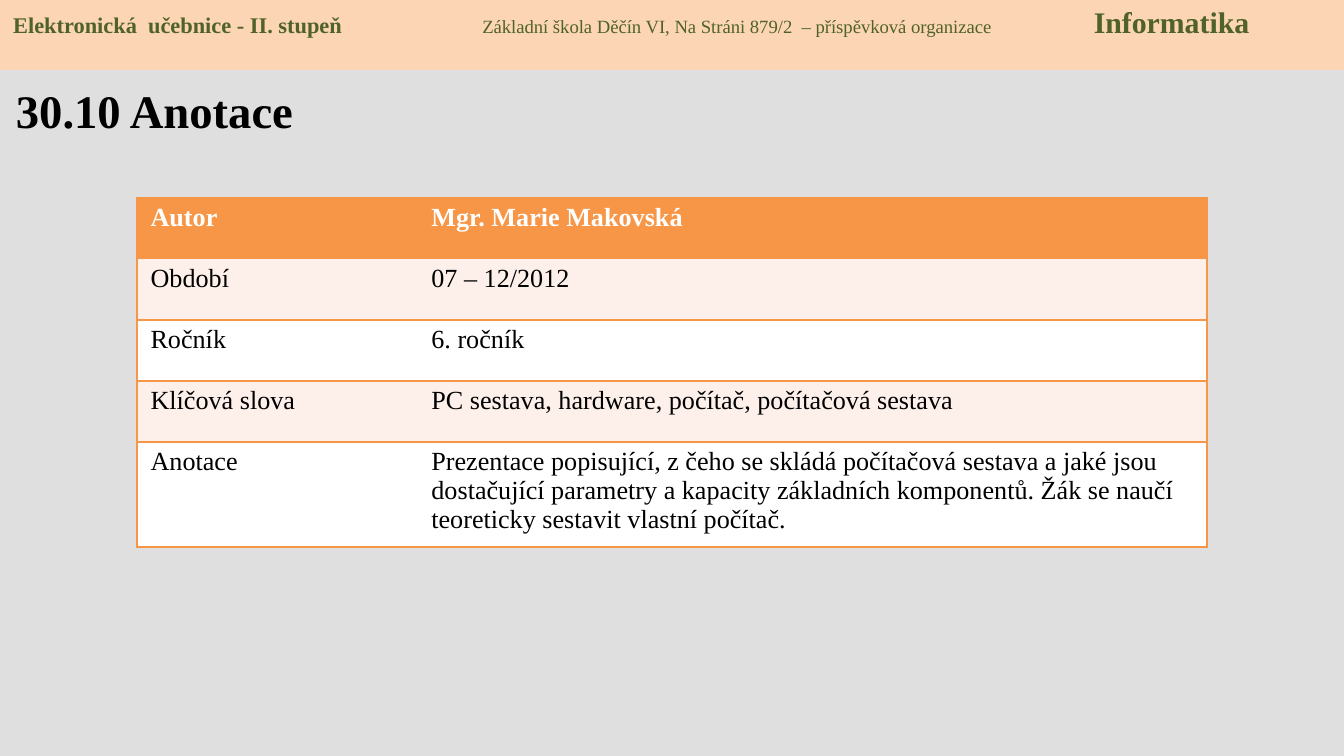
from lxml import etree
from pptx import Presentation
from pptx.dml.color import RGBColor
from pptx.enum.shapes import MSO_SHAPE
from pptx.enum.text import MSO_ANCHOR, PP_ALIGN
from pptx.oxml.ns import qn
from pptx.util import Inches, Pt

RECT = MSO_SHAPE.RECTANGLE
TOP = MSO_ANCHOR.TOP
LEFT = PP_ALIGN.LEFT
FONT = "Times New Roman"
ORANGE, GREEN = "F79646", "4F6228"
BLACK, WHITE, PINK = "000000", "FFFFFF", "FDEFE9"


def style(font, size, color, bold):
    font.name, font.size, font.bold = FONT, Pt(size), bold
    font.color.rgb = RGBColor.from_string(color)


def add_edges(cell, shown):
    """Draw the named cell edges in orange and clear the others."""
    props = cell._tc.get_or_add_tcPr()
    for side in ("L", "R", "T", "B"):
        line = etree.SubElement(props, qn(f"a:ln{side}"), w=str(Pt(1)))
        if side in shown:
            fill = etree.SubElement(line, qn("a:solidFill"))
            etree.SubElement(fill, qn("a:srgbClr"), val=ORANGE)
        else:
            etree.SubElement(line, qn("a:noFill"))


prs = Presentation()
prs.slide_width = Inches(10)
prs.slide_height = Inches(10) * 9 // 16
slide = prs.slides.add_slide(prs.slide_layouts[6])
back = slide.background.fill
back.solid()
back.fore_color.rgb = RGBColor.from_string("DFDFDF")

# Title
title = slide.shapes.add_textbox(Inches(0.02), Inches(0.56), Inches(3.19), Inches(0.49))
title.text_frame.word_wrap = True
title.text_frame.text = "30.10 Anotace"
style(title.text_frame.paragraphs[0].runs[0].font, 25, BLACK, True)

# Annotation table
rows = [
    ("Autor", "Mgr. Marie Makovská"),
    ("Období", "07 – 12/2012"),
    ("Ročník", "6. ročník"),
    ("Klíčová slova", "PC sestava, hardware, počítač, počítačová sestava"),
    ("Anotace", "Prezentace popisující, z čeho se skládá počítačová sestava a jaké jsou "
     "dostačující parametry a kapacity základních komponentů. Žák se naučí "
     "teoreticky sestavit vlastní počítač."),
]
table = slide.shapes.add_table(len(rows), 2, Inches(1.02), Inches(1.47),
                               Inches(7.96), Inches(2.6)).table
for col, width in zip(table.columns, (2.09, 5.87)):
    col.width = Inches(width)
for i, texts in enumerate(rows):
    table.rows[i].height = Inches(0.78) if i == len(rows) - 1 else Inches(1.82) // 4
    shade = ORANGE if i == 0 else PINK if i % 2 else WHITE
    for j, text in enumerate(texts):
        cell = table.cell(i, j)
        add_edges(cell, "LTB" if j == 0 else "RTB")
        cell.fill.solid()
        cell.fill.fore_color.rgb = RGBColor.from_string(shade)
        cell.margin_left = cell.margin_right = Inches(0.1)
        cell.margin_top = cell.margin_bottom = Inches(0.04)
        cell.text = text
        run = cell.text_frame.paragraphs[0].runs[0]
        style(run.font, 14, BLACK if i else WHITE, i == 0)

# Header band
band = slide.shapes.add_shape(RECT, 0, Inches(-0.02), Inches(10), Inches(0.54))
band.shadow.inherit = False
band.fill.solid()
band.fill.fore_color.rgb = RGBColor.from_string("FCD5B5")
band.line.fill.background()
frame = band.text_frame
frame.word_wrap = True
frame.vertical_anchor = TOP
frame.margin_top = Inches(0.05)
para = frame.paragraphs[0]
para.alignment = LEFT
tabs = etree.SubElement(para._p.get_or_add_pPr(), qn("a:tabLst"))
for stop in (3.49, 8.04):
    etree.SubElement(tabs, qn("a:tab"), pos=str(Inches(stop)), algn="l")
for text, size, bold in [
    ("Elektronická  učebnice - II. stupeň\t", 12, True),
    ("Základní škola Děčín VI, Na Stráni 879/2  – příspěvková organizace\t", 10, False),
    ("Informatika", 16, True),
]:
    run = para.add_run()
    run.text = text
    style(run.font, size, GREEN, bold)

prs.save("out.pptx")
